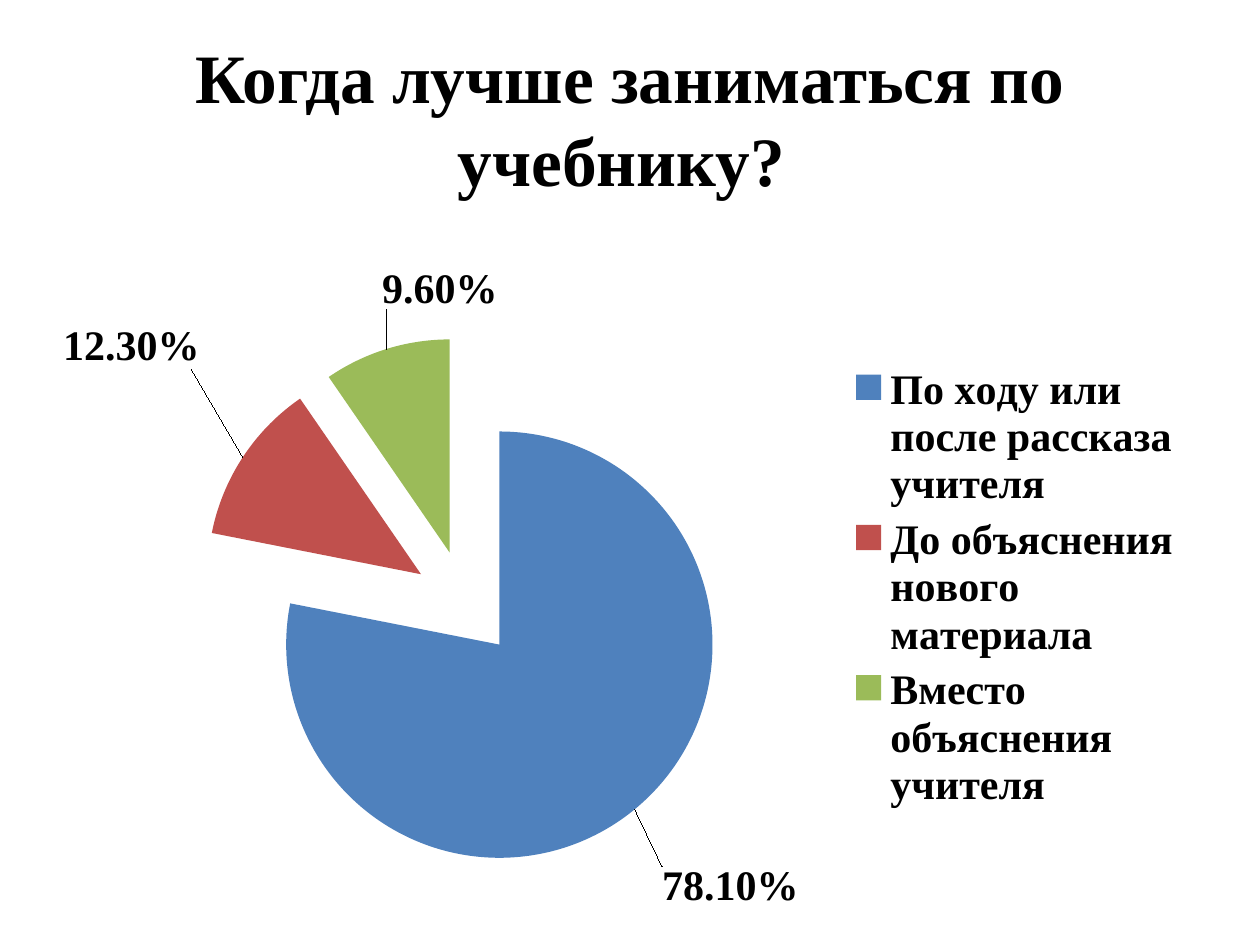
from lxml.etree import SubElement
from pptx import Presentation
from pptx.chart.data import CategoryChartData
from pptx.dml.color import RGBColor
from pptx.enum.chart import XL_CHART_TYPE, XL_LABEL_POSITION, XL_LEGEND_POSITION
from pptx.enum.text import MSO_ANCHOR, PP_ALIGN
from pptx.oxml import parse_xml
from pptx.oxml.ns import nsdecls, qn
from pptx.util import Pt

SCALE = 914400 // 126
COLORS = {"text": "000000", "during": "4F81BD", "before": "C0504D", "instead": "9BBB59"}
FONT = "Times New Roman"
ANSWERS = [
    ("По ходу или после рассказа учителя", 0.781, "during", (0.02, 0.08)),
    ("До объяснения нового материала", 0.123, "before", (-0.04, -0.13)),
    ("Вместо объяснения учителя", 0.096, "instead", (0.1, -0.05)),
]


class SlideBuilder:
    def __init__(self, presentation):
        self.slide = presentation.slides.add_slide(presentation.slide_layouts[5])

    def box(self, *lengths):
        return [length * SCALE for length in lengths]

    def style_font(self, font, size):
        font.name = FONT
        font.size = Pt(size)
        font.bold = True
        font.color.rgb = RGBColor.from_string(COLORS["text"])

    def manual_layout(self, **values):
        layout = parse_xml(f"<c:layout {nsdecls('c')}/>")
        manual = SubElement(layout, qn("c:manualLayout"))
        for name, value in values.items():
            SubElement(manual, qn(f"c:{name}")).set("val", str(value))
        return layout

    def title(self, text, left, top, width, height):
        shape = self.slide.shapes.title
        shape.left, shape.top, shape.width, shape.height = self.box(left, top, width, height)
        frame = shape.text_frame
        frame.text = text
        frame.word_wrap = True
        frame.vertical_anchor = MSO_ANCHOR.MIDDLE
        paragraph = frame.paragraphs[0]
        paragraph.alignment = PP_ALIGN.CENTER
        self.style_font(paragraph.runs[0].font, 39.6)

    def pie(self, answers, left, top, width, height):
        data = CategoryChartData(number_format="0.00%")
        data.categories = [answer[0] for answer in answers]
        data.add_series("Series 1", [answer[1] for answer in answers])
        chart = self.slide.shapes.add_chart(
            XL_CHART_TYPE.PIE, *self.box(left, top, width, height), data
        ).chart
        chart.has_title = False
        chart.font.name = "Calibri"
        chart.font.size = Pt(10)
        chart.has_legend = True
        chart.legend.position = XL_LEGEND_POSITION.RIGHT
        chart.legend.include_in_layout = False
        self.style_font(chart.legend.font, 24)

        plot = chart.plots[0]
        plot.vary_by_categories = True
        plot_area = plot._element.getparent()
        for layout in plot_area.findall(qn("c:layout")):
            plot_area.remove(layout)
        plot_area.insert(0, self.manual_layout(
            layoutTarget="inner", xMode="edge", yMode="edge", x=0.12, y=0.11, w=0.47, h=0.83
        ))

        series = plot.series[0]
        explosion = parse_xml(f'<c:explosion {nsdecls("c")} val="25"/>')
        series._element.find(qn("c:tx")).addnext(explosion)
        labels = series.data_labels
        labels.show_value = True
        labels.number_format = "0.00%"
        labels.number_format_is_linked = False
        labels.position = XL_LABEL_POSITION.OUTSIDE_END
        self.style_font(labels.font, 24)
        for index, (_, _, color, (x, y)) in enumerate(answers):
            point = series.points[index]
            point.format.fill.solid()
            point.format.fill.fore_color.rgb = RGBColor.from_string(COLORS[color])
            self.style_font(point.data_label.font, 24)
            point.data_label.position = XL_LABEL_POSITION.OUTSIDE_END
            label = labels._element.findall(qn("c:dLbl"))[index]
            label.find(qn("c:idx")).addnext(self.manual_layout(x=x, y=y))


def main():
    presentation = Presentation()
    presentation.slide_width = 1260 * SCALE
    presentation.slide_height = 945 * SCALE
    builder = SlideBuilder(presentation)
    builder.title("Когда лучше заниматься по учебнику? ", 63, 38, 1134, 158)
    builder.pie(ANSWERS, 63, 265, 1134, 645)
    presentation.save("out.pptx")


if __name__ == "__main__":
    main()
